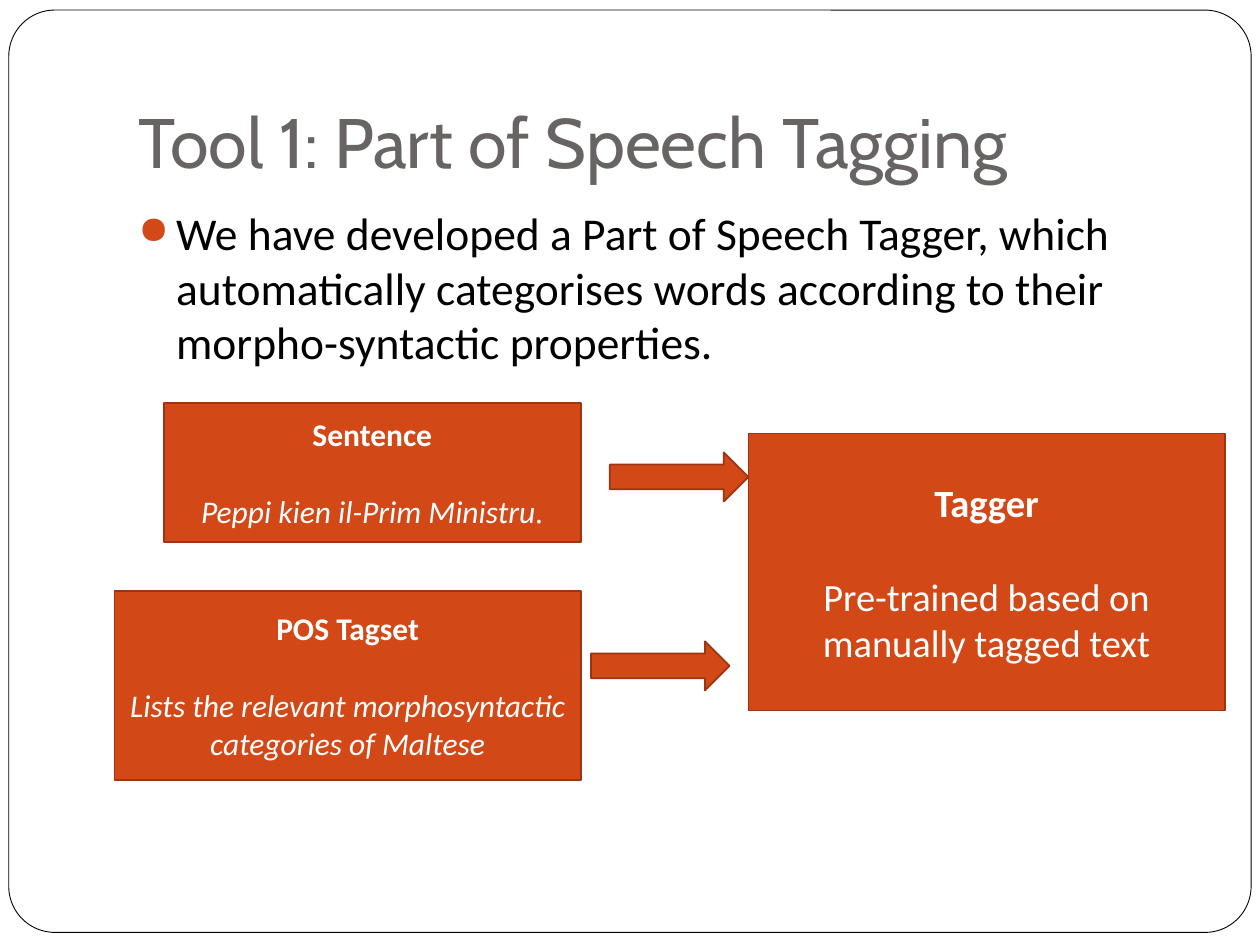
from lxml import etree
from pptx import Presentation
from pptx.dml.color import RGBColor
from pptx.enum import shapes, text
from pptx.oxml.ns import qn
from pptx.util import Inches, Pt

ORANGE, DARK_ORANGE = "D34817", "9C3511"
BLACK, WHITE, GREY = "000000", "FFFFFF", "696464"
LINE_HEIGHT = 1.22  # Calibri line height relative to its size


def color(hex_string):
    return RGBColor.from_string(hex_string)


def style_font(font, name, size, hex_string):
    font.name, font.size = name, Pt(size)
    font.color.rgb = color(hex_string)


def add_box(slide, kind, box, fill=ORANGE, line=DARK_ORANGE, width=1):
    shape = slide.shapes.add_shape(kind, *map(Inches, box))
    shape.shadow.inherit = False
    shape.fill.solid()
    shape.fill.fore_color.rgb = color(fill)
    shape.line.color.rgb = color(line)
    shape.line.width = Pt(width)
    return shape


def add_frame(slide, box):
    frame = add_box(slide, shapes.MSO_SHAPE.ROUNDED_RECTANGLE, box, WHITE, BLACK, 0.5)
    frame.adjustments[0] = 0.05
    # Keep the frame behind the title
    slide.shapes._spTree.remove(frame._element)
    slide.shapes._spTree.insert(2, frame._element)


def set_title(slide, box, wording):
    title = slide.shapes.title
    title.left, title.top, title.width, title.height = map(Inches, box)
    frame = title.text_frame
    frame.text = wording
    frame.auto_size = text.MSO_AUTO_SIZE.NONE
    frame.vertical_anchor = text.MSO_ANCHOR.BOTTOM
    frame.margin_bottom = Inches(0.1)
    paragraph = frame.paragraphs[0]
    paragraph.alignment = text.PP_ALIGN.LEFT
    style_font(paragraph.font, "Cabin", 40, GREY)


def add_bullet_text(slide, box, wording):
    frame = slide.shapes.add_textbox(*map(Inches, box)).text_frame
    frame.word_wrap = True
    paragraph = frame.paragraphs[0]
    paragraph.text = wording
    paragraph.space_before = Pt(5.8)
    style_font(paragraph.font, "Calibri", 26, BLACK)
    # Hanging orange bullet
    properties = paragraph._p.get_or_add_pPr()
    properties.set("marL", str(Inches(0.3)))
    properties.set("indent", str(-Inches(0.3)))
    bullet_color = etree.Element(qn("a:buClr"))
    etree.SubElement(bullet_color, qn("a:srgbClr"), val=ORANGE)
    bullet_size = etree.Element(qn("a:buSzPct"), val="85000")
    bullet = etree.Element(qn("a:buChar"), char="●")
    spacing = properties.find(qn("a:spcBef"))
    for element in (bullet, bullet_size, bullet_color):
        spacing.addnext(element)


def add_step(slide, box, heading, detail, size, italic=False):
    """Box with a bold heading, a one-line gap and a detail."""
    shape = add_box(slide, shapes.MSO_SHAPE.RECTANGLE, box)
    frame = shape.text_frame
    frame.word_wrap = True
    frame.vertical_anchor = text.MSO_ANCHOR.MIDDLE
    first, second = frame.paragraphs[0], frame.add_paragraph()
    first.text, second.text = heading, detail
    for paragraph in (first, second):
        paragraph.alignment = text.PP_ALIGN.CENTER
        style_font(paragraph.font, "Calibri", size, WHITE)
    first.font.bold = True
    second.font.italic = italic
    second.space_before = Pt(round(size * LINE_HEIGHT))
    return second


def add_diagram(slide, left, top):
    # Inputs
    sentence = add_step(slide, (left + 0.39, top, 3.31, 1.1), "Sentence",
                        "Peppi kien il-Prim Ministru", 18, italic=True)
    full_stop = sentence.add_run()
    full_stop.text = "."
    full_stop.font.name = "Times New Roman"
    add_step(slide, (left, top + 1.49, 3.7, 1.5), "POS Tagset",
             "Lists the relevant morphosyntactic categories of Maltese", 18, italic=True)
    # Tagger
    add_step(slide, (left + 5.03, top + 0.24, 3.78, 2.2), "Tagger",
             "Pre-trained based on manually tagged text", 22)
    # Arrows into the tagger
    for x, y in ((3.93, 0.39), (3.78, 1.89)):
        add_box(slide, shapes.MSO_SHAPE.RIGHT_ARROW, (left + x, top + y, 1.1, 0.39))


def main():
    presentation = Presentation()
    presentation.slide_width, presentation.slide_height = Inches(10), Inches(7.5)
    slide = presentation.slides.add_slide(presentation.slide_layouts[5])
    add_frame(slide, (0.07, 0.08, 9.86, 7.32))
    set_title(slide, (1, 0.3, 8.5, 1.25), "Tool 1: Part of Speech Tagging")
    add_bullet_text(slide, (1, 1.58, 8.5, 1.5),
                    "We have developed a Part of Speech Tagger, which automatically "
                    "categorises words according to their morpho-syntactic properties.")
    add_diagram(slide, 0.91, 3.2)
    presentation.save("out.pptx")


if __name__ == "__main__":
    main()
